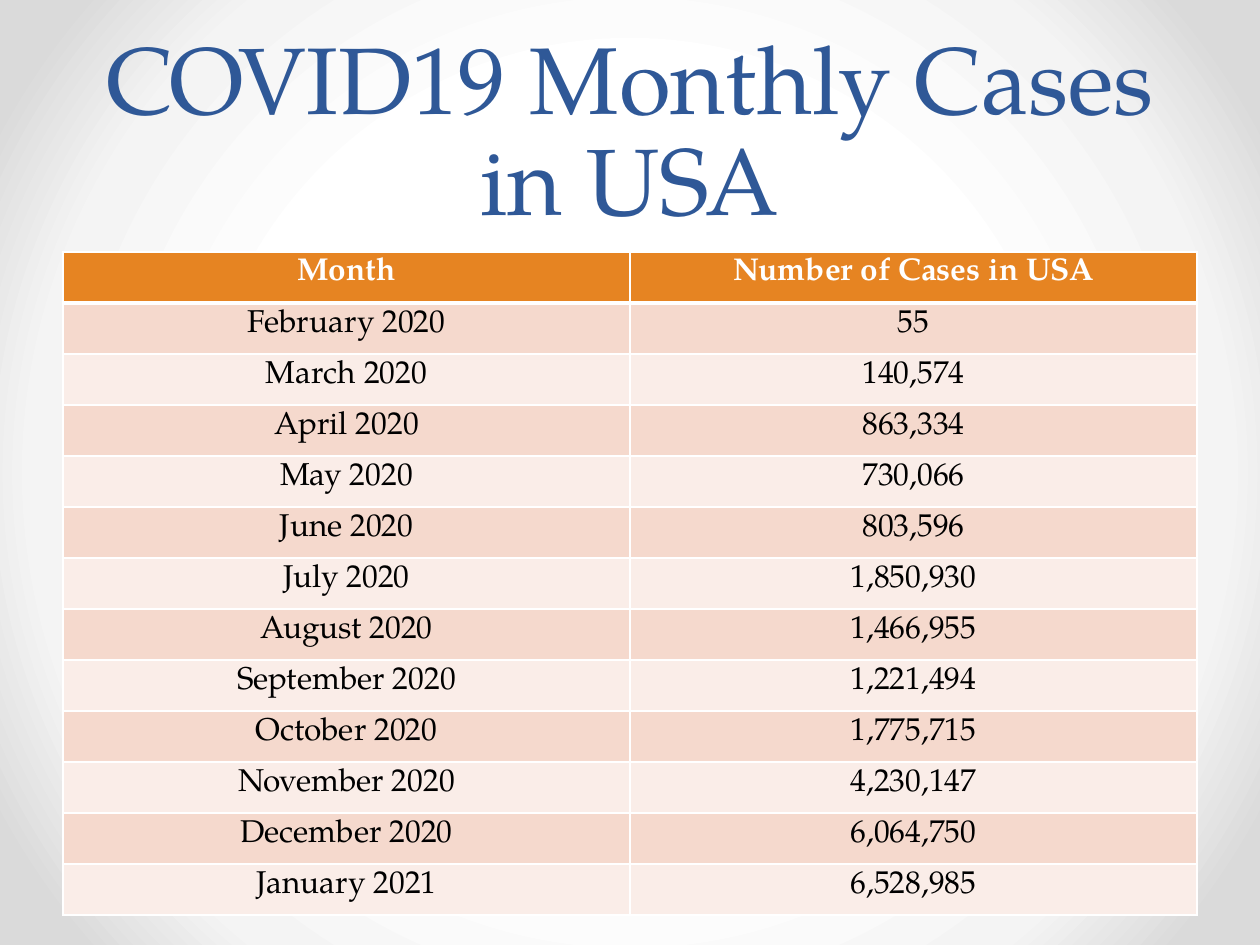
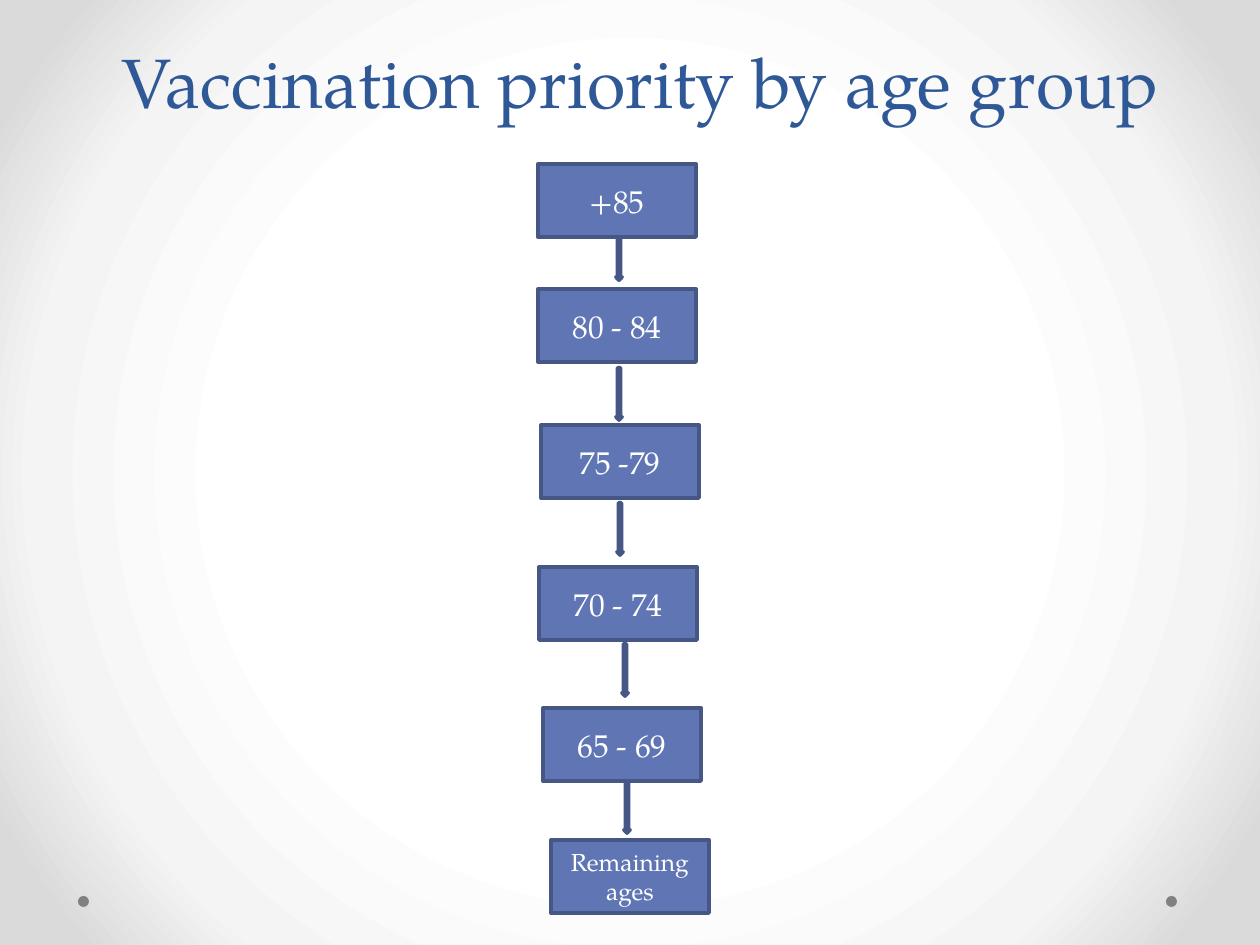
from pptx import Presentation
from pptx.dml.color import RGBColor
from pptx.enum.shapes import MSO_SHAPE as SHAPE
from pptx.enum.text import MSO_ANCHOR as ANCHOR, MSO_AUTO_SIZE as AUTO, PP_ALIGN as ALIGN
from pptx.oxml import parse_xml
from pptx.oxml.ns import nsdecls, qn
from pptx.util import Emu, Pt

FONT = "TeX Gyre Pagella"
TITLE, WHITE, BLACK, DOT = "2F5897", "FFFFFF", "000000", "808080"
BOX, EDGE = "6076B4", "475785"
HEADER, BANDS = "E68422", ("F5D9CD", "FAEDE8")
BACKDROP = [(50, "FFFFFF"), (76, "F4F4F4"), (92, "DADADA")]
DOT_LEFTS, DOT_TOP, DOT_SIZE = (1166, 78), 896, 11

CASES_TITLE = ("COVID19 Monthly Cases in USA", 54, (63, 42, 1134, 199))
CASES = [
    ("Month", "Number of Cases in USA"),
    ("February 2020", "55"),
    ("March 2020", "140,574"),
    ("April 2020", "863,334"),
    ("May 2020", "730,066"),
    ("June 2020", "803,596"),
    ("July 2020", "1,850,930"),
    ("August 2020", "1,466,955"),
    ("September 2020", "1,221,494"),
    ("October 2020", "1,775,715"),
    ("November 2020", "4,230,147"),
    ("December 2020", "6,064,750"),
    ("January 2021", "6,528,985"),
]
TABLE_LEFT, TABLE_TOP, COL_W, ROW_H = 63, 252, 567, 51

AGES_TITLE = ("Vaccination priority by age group", 40, (73, 3, 1134, 126))
AGES = [
    ("+85", 18, 538, 164),
    ("80 - 84", 18, 538, 289),
    ("75 -79", 18, 541, 425),
    ("70 - 74", 18, 539, 567),
    ("65 - 69", 18, 543, 708),
    ("Remaining ages", 14, 551, 840),
]
BOX_W, BOX_H = 158, 73
ARROWS = [(616, 238, 42), (616, 368, 52), (617, 503, 52), (622, 644, 52), (624, 781, 52)]
ARROW_W = 6


def px(n):
    return Emu(round(n * 914400 / 126))


def rgb(value):
    return RGBColor.from_string(value)


def style_text(tf, size, color, bold=False):
    for p in tf.paragraphs:
        p.alignment = ALIGN.CENTER
        for r in p.runs:
            r.font.name, r.font.size, r.font.bold = FONT, Pt(size), bold
            r.font.color.rgb = rgb(color)


def add_shape(shapes, kind, box, fill, line=None):
    sp = shapes.add_shape(kind, *map(px, box))
    sp.shadow.inherit = False
    sp.fill.solid()
    sp.fill.fore_color.rgb = rgb(fill)
    if line:
        sp.line.color.rgb = rgb(line)
        sp.line.width = Pt(2.25)
    else:
        sp.line.fill.background()
    return sp


def set_backdrop(master):
    master.background.fill.solid()
    stops = "".join(f'<a:gs pos="{pos * 1000}"><a:srgbClr val="{color}"/></a:gs>'
                    for pos, color in BACKDROP)
    bg = master.element.find(".//" + qn("p:bgPr"))
    bg.replace(bg[0], parse_xml(
        f'<a:gradFill {nsdecls("a")} rotWithShape="1"><a:gsLst>{stops}</a:gsLst>'
        '<a:path path="circle"><a:fillToRect l="50000" t="50000" r="50000" b="50000"/>'
        '</a:path></a:gradFill>'))


def add_master_dots(master, s):
    for left in DOT_LEFTS:
        dot = add_shape(s.shapes, SHAPE.OVAL, (left, DOT_TOP, DOT_SIZE, DOT_SIZE), DOT)
        master.shapes.element.append(dot.element)


def add_slide(prs, text, size, box):
    s = prs.slides.add_slide(prs.slide_layouts[5])
    title = s.shapes.title
    title.left, title.top, title.width, title.height = map(px, box)
    tf = title.text_frame
    tf.text = text
    tf.word_wrap = True
    tf.auto_size = AUTO.NONE
    tf.vertical_anchor = ANCHOR.BOTTOM
    tf.paragraphs[0].line_spacing = Pt(58)
    style_text(tf, size, TITLE)
    return s


def set_borders(cell, bottom):
    widths = {"lnL": 1, "lnR": 1, "lnT": 1, "lnB": bottom}
    tcPr = cell._tc.get_or_add_tcPr()
    for i, (side, width) in enumerate(widths.items()):
        tcPr.insert(i, parse_xml(
            f'<a:{side} {nsdecls("a")} w="{Pt(width)}"><a:solidFill>'
            f'<a:srgbClr val="{WHITE}"/></a:solidFill></a:{side}>'))


def add_cases_table(s):
    rows, cols = len(CASES), len(CASES[0])
    frame = s.shapes.add_table(rows, cols, px(TABLE_LEFT), px(TABLE_TOP),
                               px(cols * COL_W), px(rows * ROW_H))
    table = frame.table
    for row in table.rows:
        row.height = px(ROW_H)
    for i, record in enumerate(CASES):
        head = i == 0
        for j, text in enumerate(record):
            cell = table.cell(i, j)
            cell.text = text
            cell.fill.solid()
            cell.fill.fore_color.rgb = rgb(HEADER if head else BANDS[(i - 1) % 2])
            style_text(cell.text_frame, 18, WHITE if head else BLACK, head)
            set_borders(cell, 3 if i == 0 else 1)


def add_age_flow(s):
    flow = s.shapes.add_group_shape().shapes
    for text, size, left, top in AGES:
        sp = add_shape(flow, SHAPE.RECTANGLE, (left, top, BOX_W, BOX_H), BOX, EDGE)
        tf = sp.text_frame
        tf.text = text
        tf.word_wrap = True
        tf.vertical_anchor = ANCHOR.MIDDLE
        style_text(tf, size, WHITE)
    for left, top, height in ARROWS:
        add_shape(flow, SHAPE.DOWN_ARROW, (left, top, ARROW_W, height), BOX, EDGE)


def main():
    prs = Presentation()
    prs.slide_width, prs.slide_height = px(1260), px(945)
    master = prs.slide_master
    set_backdrop(master)
    cases = add_slide(prs, *CASES_TITLE)
    add_master_dots(master, cases)
    add_cases_table(cases)
    add_age_flow(add_slide(prs, *AGES_TITLE))
    prs.save("out.pptx")


if __name__ == "__main__":
    main()
